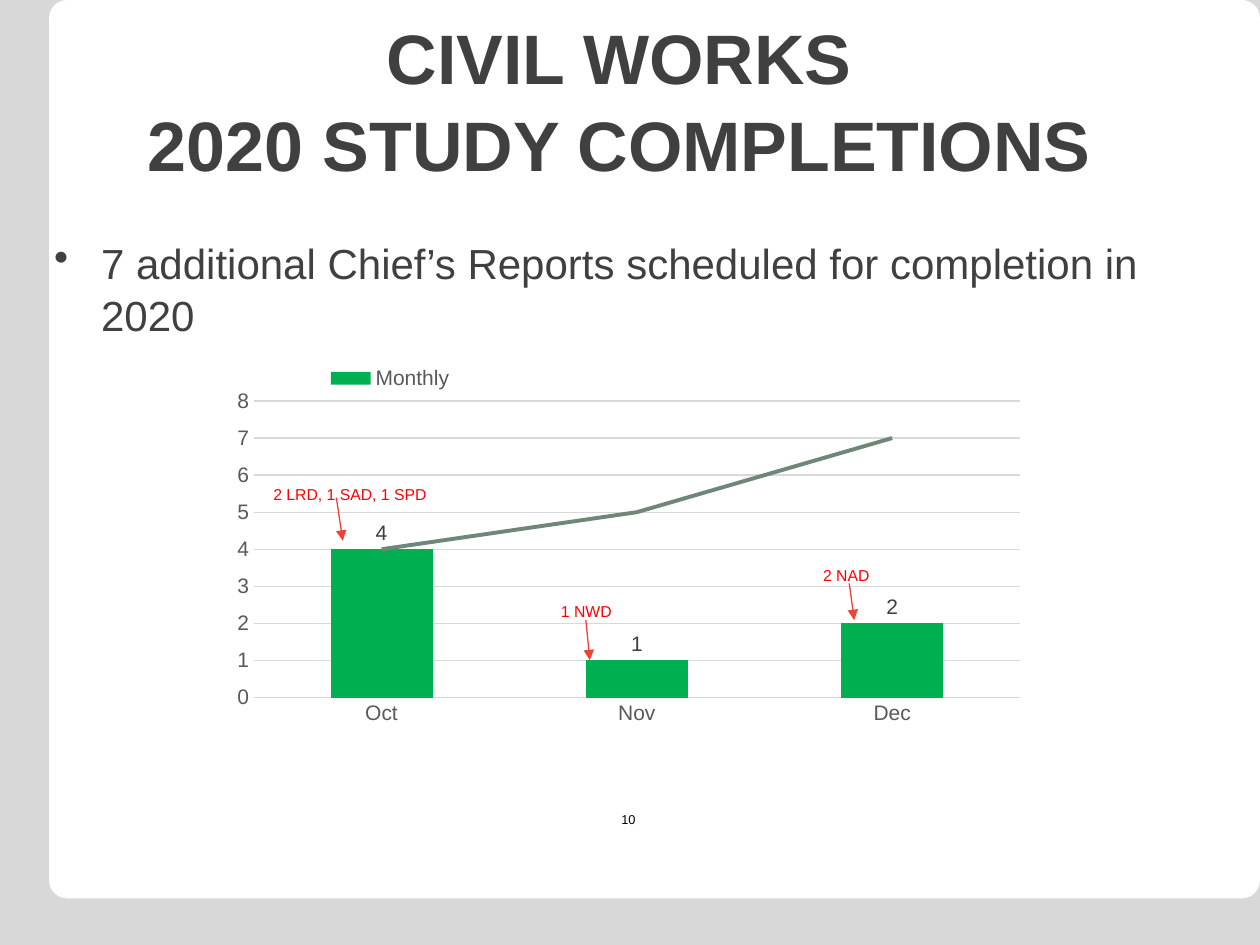
from lxml import etree
from pptx import Presentation
from pptx.chart.data import CategoryChartData
from pptx.dml.color import RGBColor
from pptx.enum.chart import XL_CHART_TYPE as ChartType, XL_LABEL_POSITION as LabelPos
from pptx.enum.chart import XL_LEGEND_POSITION as LegendPos, XL_MARKER_STYLE as Marker
from pptx.enum.chart import XL_TICK_MARK as Tick
from pptx.enum.shapes import MSO_CONNECTOR as Connector, MSO_SHAPE as Shape
from pptx.enum.text import MSO_ANCHOR as Anchor, PP_ALIGN as Align
from pptx.oxml import parse_xml
from pptx.oxml.ns import nsdecls, qn
from pptx.util import Cm, Pt

DARK, GREY, RULE = "404040", "595959", "D9D9D9"


def style(font, size, color, bold=False):
    font.name, font.size, font.bold = "Arial", Pt(size), bold
    font.color.rgb = RGBColor.from_string(color)


def add_text(text, left, top, width, height, size, color, align=Align.LEFT, bold=False):
    frame = slide.shapes.add_textbox(Cm(left), Cm(top), Cm(width), Cm(height)).text_frame
    frame.word_wrap = True
    paragraph = frame.paragraphs[0]
    paragraph.text = text
    paragraph.alignment = align
    style(paragraph.font, size, color, bold)
    return frame


prs = Presentation()
prs.slide_width, prs.slide_height = Cm(25.4), Cm(19.05)
slide = prs.slides.add_slide(prs.slide_layouts[6])

# Grey background with a rounded white panel
slide.background.fill.solid()
slide.background.fill.fore_color.rgb = RGBColor.from_string("D8D8D8")
panel = slide.shapes.add_shape(Shape.ROUNDED_RECTANGLE, Cm(0.99), 0, Cm(24.41), Cm(18.11))
panel.adjustments[0] = 0.02
panel.shadow.inherit = False
panel.fill.solid()
panel.fill.fore_color.rgb = RGBColor.from_string("FFFFFF")
panel.line.fill.background()

# Title
title = add_text("CIVIL WORKS\v2020 STUDY COMPLETIONS", 0.84, 0.86, 23.29, 2.24,
                 40, DARK, Align.CENTER, bold=True)
title.vertical_anchor = Anchor.MIDDLE
title.paragraphs[0].line_spacing = 1.04

# Bulleted statement
statement = add_text("7 additional Chief’s Reports scheduled for completion in 2020",
                     0.84, 4.62, 23.29, 2.4, 24, DARK).paragraphs[0]
statement.line_spacing = 1.04
bullet_props = statement._p.get_or_add_pPr()
bullet_props.set("marL", str(Cm(0.95)))
bullet_props.set("indent", str(-Cm(0.95)))
bullet = etree.Element(qn("a:buChar"), char="•")
bullet_props.insert_element_before(bullet, "a:tabLst", "a:defRPr", "a:extLst")

# Completions chart: monthly columns
completions = CategoryChartData()
completions.categories = ["Oct", "Nov", "Dec"]
completions.add_series("Monthly", (4, 1, 2))
completions.add_series("Cumulative", (4, 5, 7))
chart = slide.shapes.add_chart(ChartType.COLUMN_CLUSTERED, Cm(4.37), Cm(6.27),
                               Cm(16.64), Cm(8.48), completions).chart
style(chart.font, 10, "000000")
chart.has_title = False
columns = chart.plots[0]
columns.gap_width = 150
columns.vary_by_categories = False
monthly = columns.series[0]
monthly.format.fill.solid()
monthly.format.fill.fore_color.rgb = RGBColor.from_string("00B050")
labels = monthly.data_labels
labels.show_value = True
labels.position = LabelPos.OUTSIDE_END
style(labels.font, 12, DARK)

# Cumulative series moves to a line plot on the same axes
bar_plot = chart._chartSpace.find(".//" + qn("c:barChart"))
line_plot = parse_xml(f'<c:lineChart {nsdecls("c")}><c:grouping val="standard"/>'
                      '<c:varyColors val="0"/><c:marker val="1"/></c:lineChart>')
cumulative_xml = bar_plot.findall(qn("c:ser"))[1]
for bar_only in cumulative_xml.findall(qn("c:invertIfNegative")):
    cumulative_xml.remove(bar_only)
line_plot.insert(2, cumulative_xml)
for axis_id in bar_plot.findall(qn("c:axId")):
    etree.SubElement(line_plot, qn("c:axId"), val=axis_id.get("val"))
bar_plot.addnext(line_plot)
cumulative = chart.plots[1].series[0]
cumulative.smooth = False
cumulative.marker.style = Marker.NONE
cumulative.format.line.color.rgb = RGBColor.from_string("6E8778")
cumulative.format.line.width = Pt(2.25)

# Axes
months, counts = chart.category_axis, chart.value_axis
for axis in (months, counts):
    axis.major_tick_mark = axis.minor_tick_mark = Tick.NONE
    style(axis.tick_labels.font, 12, GREY)
counts.minimum_scale, counts.maximum_scale, counts.major_unit = 0, 8, 1
counts.format.line.fill.background()
for rule in (months.format.line, counts.major_gridlines.format.line):
    rule.color.rgb = RGBColor.from_string(RULE)
    rule.width = Pt(0.75)

# Legend shows the monthly entry only
chart.has_legend = True
legend = chart.legend
legend.position = LegendPos.BOTTOM
legend.include_in_layout = False
style(legend.font, 12, GREY)
legend_position = legend._element.find(qn("c:legendPos"))
hidden_entry = parse_xml(f'<c:legendEntry {nsdecls("c")}><c:idx val="1"/>'
                         '<c:delete val="1"/></c:legendEntry>')
if legend_position is None:
    legend._element.insert(0, hidden_entry)
else:
    legend_position.addnext(hidden_entry)

# Manual places of the plot area and legend
plot_area = chart._chartSpace.find(".//" + qn("c:plotArea"))
for parent in (plot_area, legend._element):
    for old_layout in parent.findall(qn("c:layout")):
        parent.remove(old_layout)
for parent, index, target, place in (
        (plot_area, 0, '<c:layoutTarget val="inner"/>', (0.045, 0.214, 0.928, 0.705)),
        (legend._element, legend._element.index(hidden_entry) + 1, "", (0.11, 0.12, 0.2, 0.08))):
    modes = '<c:xMode val="edge"/><c:yMode val="edge"/>'
    sizes = "".join(f'<c:{key} val="{value}"/>' for key, value in zip("xywh", place))
    parent.insert(index, parse_xml(f'<c:layout {nsdecls("c")}><c:manualLayout>'
                                   f'{target}{modes}{sizes}</c:manualLayout></c:layout>'))

# Red callouts: text box, then arrow to its column
callouts = (
    ("2 LRD, 1 SAD, 1 SPD", (5.26, 9.65, 3.71, 0.64), Align.LEFT, (6.78, 10.03, 6.91, 10.9)),
    ("1 NWD", (10.08, 12.01, 3.48, 1.02), Align.CENTER, (11.81, 12.5, 11.89, 13.31)),
    ("2 NAD", (15.32, 11.28, 3.48, 1.02), Align.CENTER, (17.12, 11.76, 17.22, 12.5)),
)
for divisions, box, align, ends in callouts:
    add_text(divisions, *box, 9, "FF0000", align)
    arrow = slide.shapes.add_connector(Connector.STRAIGHT, *map(Cm, ends))
    arrow.line.color.rgb = RGBColor.from_string("EF4135")
    arrow.line.width = Pt(0.75)
    etree.SubElement(arrow.line._get_or_add_ln(), qn("a:tailEnd"), type="triangle")
    etree.SubElement(arrow._element.spPr, qn("a:effectLst"))

# Page number
add_text("10", 3.35, 16.23, 18.64, 0.56, 7.3, "000000", Align.CENTER)

prs.save("out.pptx")
